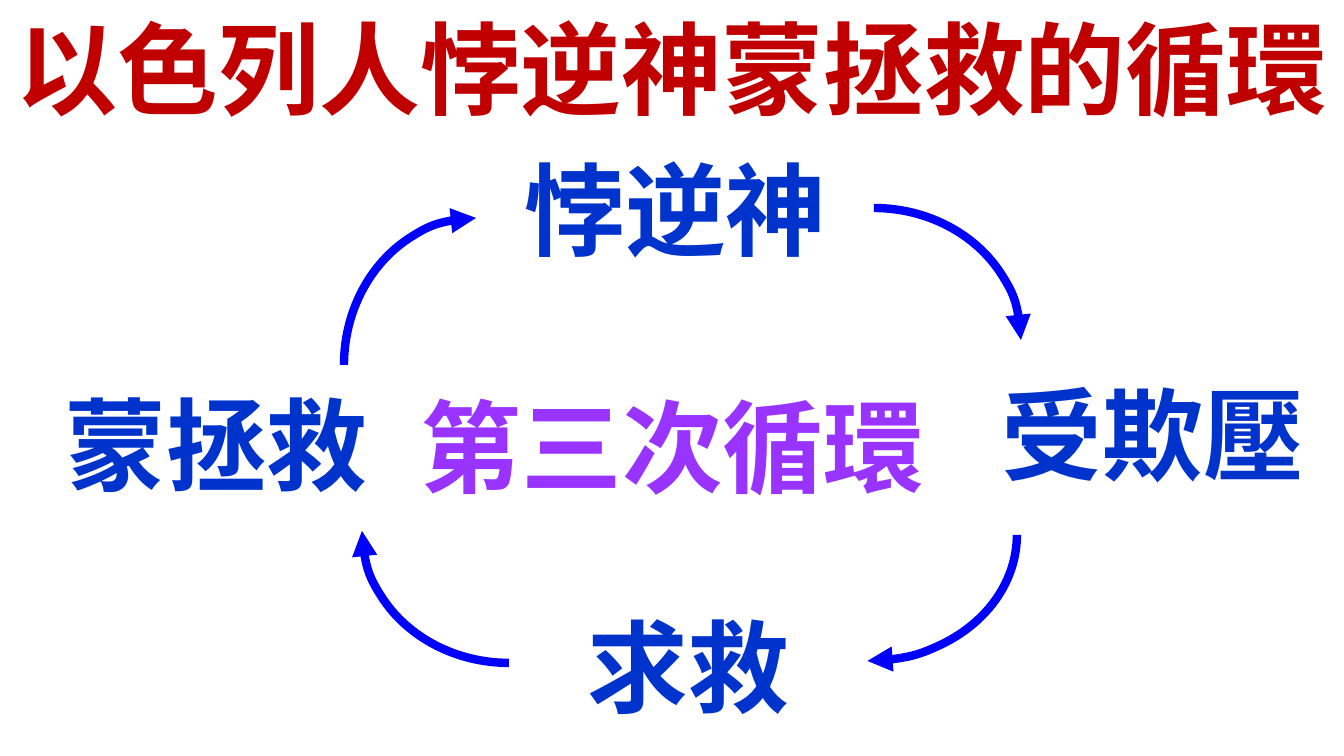
from lxml.etree import SubElement
from pptx import Presentation
from pptx.dml.color import RGBColor
from pptx.enum.shapes import MSO_SHAPE
from pptx.enum.text import MSO_AUTO_SIZE, PP_ALIGN
from pptx.oxml.ns import qn
from pptx.util import Emu, Pt

EMU_PER_PX = 914400 / 100.8
FONT = "Noto Sans CJK SC"
RED, BLUE, PURPLE, ARROW_BLUE = "C00000", "0033CC", "9933FF", "0000FF"
LABEL_HEIGHT = 132


def px(length):
    """Turn pixels into EMU."""
    return Emu(round(length * EMU_PER_PX))


def set_color(color_format, hex_color):
    """Apply a hex colour to a font or fill colour."""
    color_format.rgb = RGBColor.from_string(hex_color)


def add_label(slide, text, left, top, width, color, align=PP_ALIGN.CENTER, wrap=True):
    """Add one line of large bold text."""
    box = slide.shapes.add_textbox(px(left), px(top), px(width), px(LABEL_HEIGHT))
    frame = box.text_frame
    frame.word_wrap = wrap
    frame.auto_size = MSO_AUTO_SIZE.SHAPE_TO_FIT_TEXT
    paragraph = frame.paragraphs[0]
    paragraph.alignment = align
    run = paragraph.add_run()
    run.text = text
    run.font.size = Pt(72)
    run.font.bold = True
    run.font.name = FONT
    set_color(run.font.color, color)
    east_asian = SubElement(run.font._element, qn("a:ea"))
    east_asian.set("typeface", FONT)


def add_arc_arrow(slide, left, top, width, height, flips, rotation=0, end="a:tailEnd"):
    """Add a quarter arc with a triangle at one end."""
    arc = slide.shapes.add_shape(MSO_SHAPE.ARC, px(left), px(top), px(width), px(height))
    arc.shadow.inherit = False
    arc.rotation = rotation
    for flip in flips:
        arc._element.spPr.get_or_add_xfrm().set(flip, "1")
    arc.fill.background()
    arc.line.fill.solid()
    set_color(arc.line.fill.fore_color, ARROW_BLUE)
    arc.line.width = Pt(6)
    SubElement(arc.line._get_or_add_ln(), qn(end)).set("type", "triangle")


def main():
    """Build the cycle slide."""
    presentation = Presentation()
    presentation.slide_width, presentation.slide_height = px(1344), px(756)
    slide = presentation.slides.add_slide(presentation.slide_layouts[6])
    both = ("flipH", "flipV")

    add_arc_arrow(slide, 718, 409, 299, 252, ("flipV",), end="a:headEnd")
    add_arc_arrow(slide, 362, 399, 294, 264, both)
    add_label(slide, "悖逆神", 512, 143, 327, BLUE, wrap=False)
    add_label(slide, "受欺壓", 992, 368, 345, BLUE, align=PP_ALIGN.LEFT)
    add_label(slide, "求救", 576, 600, 225, BLUE, wrap=False)
    add_label(slide, "蒙拯救", 53, 378, 327, BLUE, wrap=False)
    add_label(slide, "以色列人悖逆神蒙拯救的循環", 0, 2, 1344, RED)
    add_arc_arrow(slide, 329, 233, 294, 264, both, rotation=90)
    add_arc_arrow(slide, 727, 208, 294, 264, both, rotation=180)
    add_label(slide, "第三次循環", 353, 380, 639, PURPLE)

    presentation.save("out.pptx")


if __name__ == "__main__":
    main()
